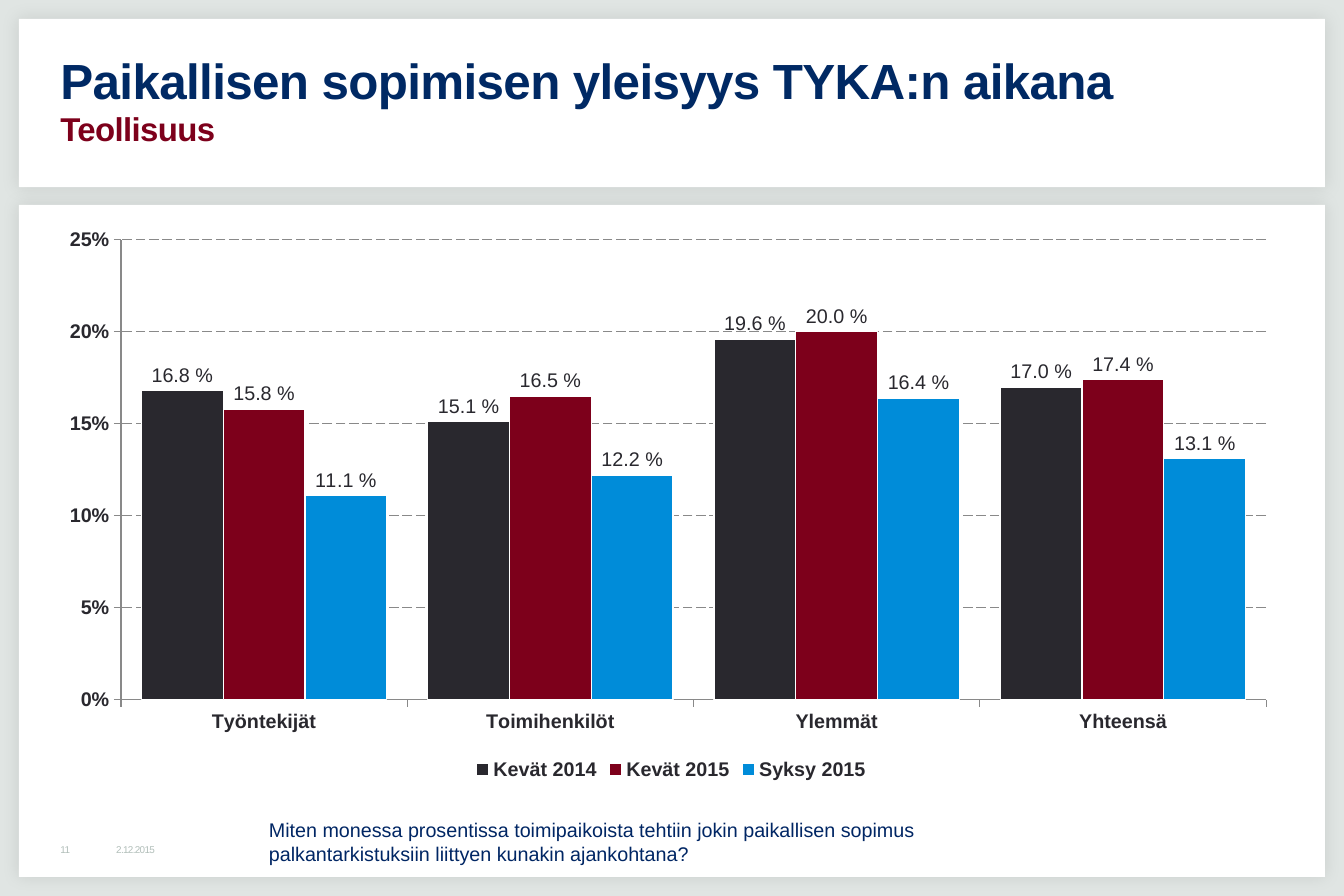
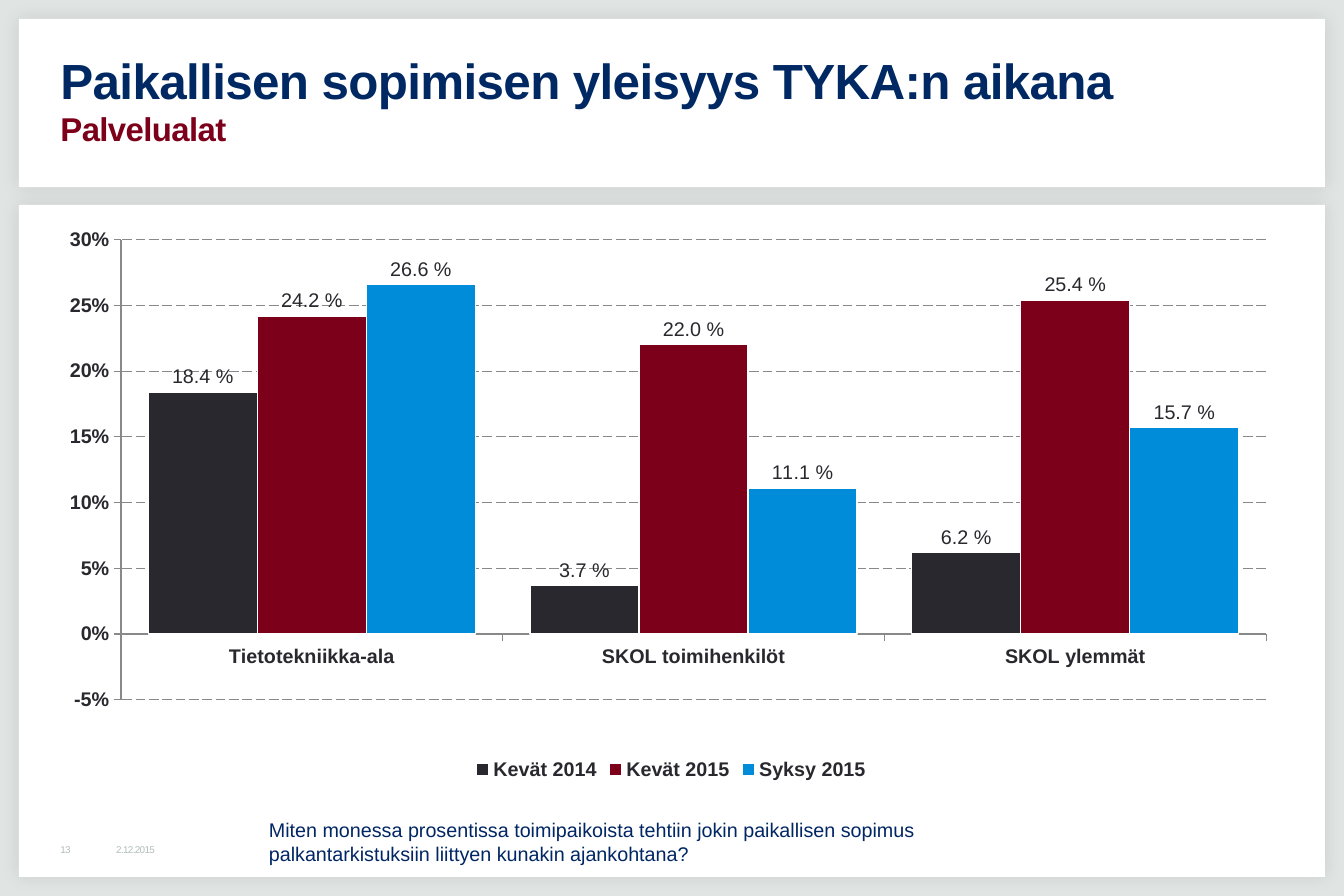
"""Build two slides comparing how common local agreements were, by sector."""
import lxml.etree
import pptx
import pptx.chart.data
import pptx.dml.color
import pptx.enum.chart
import pptx.enum.dml
import pptx.enum.shapes
import pptx.enum.text
import pptx.oxml
import pptx.oxml.ns
import pptx.util

Inches = pptx.util.Inches
Pt = pptx.util.Pt
MIDDLE = pptx.enum.text.MSO_ANCHOR.MIDDLE
TOP = pptx.enum.text.MSO_ANCHOR.TOP

FONT = "Arial"
BACKGROUND, WHITE = "E0E5E3", "FFFFFF"
NAVY, CAPTION_BLUE, FOOTER_GREY = "002964", "002664", "B1BEB9"
INK, RED, BLUE, AXIS_GREY = "29282E", "7D001B", "008CD9", "898989"

LEFT = 0.47
PANELS = [(0.16, 0.16, 11.02, 1.42), (0.16, 1.73, 11.02, 5.67)]
FOOTER_INSETS = (0.04, 0.04, 0.04, 0.04)
TITLE = "Paikallisen sopimisen yleisyys TYKA:n aikana"
DATE = "2.12.2015"
QUESTION = (
    "Miten monessa prosentissa toimipaikoista tehtiin jokin paikallisen sopimus "
    "palkantarkistuksiin liittyen kunakin ajankohtana?"
)
SERIES = [("Kevät 2014", INK), ("Kevät 2015", RED), ("Syksy 2015", BLUE)]
SLIDES = [
    {
        "number": "11",
        "sector": "Teollisuus",
        "categories": ["Työntekijät", "Toimihenkilöt", "Ylemmät", "Yhteensä"],
        "values": [
            (0.168, 0.151, 0.196, 0.170),
            (0.158, 0.165, 0.200, 0.174),
            (0.111, 0.122, 0.164, 0.131),
        ],
        "scale": (0, 0.25),
    },
    {
        "number": "13",
        "sector": "Palvelualat",
        "categories": ["Tietotekniikka-ala", "SKOL toimihenkilöt", "SKOL ylemmät"],
        "values": [
            (0.184, 0.037, 0.062),
            (0.242, 0.220, 0.254),
            (0.266, 0.111, 0.157),
        ],
        "scale": (-0.05, 0.3),
    },
]
SHADOW = (
    '<a:effectLst %s><a:outerShdw blurRad="127000" dist="0" algn="ctr" rotWithShape="0">'
    '<a:srgbClr val="000000"><a:alpha val="10000"/></a:srgbClr>'
    "</a:outerShdw></a:effectLst>" % pptx.oxml.ns.nsdecls("a")
)
PLOT_LAYOUT = {
    "layoutTarget": "inner", "xMode": "edge", "yMode": "edge",
    "x": "0.053", "y": "0.028", "w": "0.93", "h": "0.821",
}


def color(value):
    """Turn a hex string into a colour."""
    return pptx.dml.color.RGBColor.from_string(value)


def add_text(slide, box, parts, insets=(0.1, 0.05, 0.1, 0.05), anchor=TOP, bold=False, tracking="0"):
    """Add a text box with one line per (text, size, colour) part."""
    shape = slide.shapes.add_textbox(*[Inches(length) for length in box])
    frame = shape.text_frame
    frame.word_wrap = True
    frame.vertical_anchor = anchor
    frame.margin_left, frame.margin_top, frame.margin_right, frame.margin_bottom = map(Inches, insets)
    frame.text = "\v".join(text for text, size, shade in parts)
    paragraph = frame.paragraphs[0]
    for run, (text, size, shade) in zip(paragraph.runs, parts):
        run.font.name = FONT
        run.font.size = Pt(size)
        run.font.bold = bold
        run.font.color.rgb = color(shade)
        run._r.get_or_add_rPr().set("spc", tracking)
    return paragraph


presentation = pptx.Presentation()
presentation.slide_width = Inches(11.34)
presentation.slide_height = Inches(7.56)
background = presentation.slide_master.background.fill
background.solid()
background.fore_color.rgb = color(BACKGROUND)

for content in SLIDES:
    slide = presentation.slides.add_slide(presentation.slide_layouts[6])

    for box in PANELS:
        panel = slide.shapes.add_shape(
            pptx.enum.shapes.MSO_SHAPE.RECTANGLE, *[Inches(length) for length in box]
        )
        panel.fill.solid()
        panel.fill.fore_color.rgb = color(WHITE)
        panel.line.fill.background()
        panel._element.spPr.append(pptx.oxml.parse_xml(SHADOW))

    for left, width, text in [(LEFT, 0.47, content["number"]), (0.94, 1.42, DATE)]:
        add_text(slide, (left, 7.09, width, 0.16), [(text, 6, FOOTER_GREY)],
                 FOOTER_INSETS, MIDDLE, tracking="-40")

    title = add_text(slide, (LEFT, 0.31, 10.4, 1.1),
                     [(TITLE, 30, NAVY), (content["sector"], 20, RED)],
                     (0.04, 0.05, 0.1, 0.05), MIDDLE, bold=True, tracking="-40")
    title.line_spacing = 0.95

    data = pptx.chart.data.CategoryChartData(number_format="0.0%")
    data.categories = content["categories"]
    for (name, shade), values in zip(SERIES, content["values"]):
        data.add_series(name, values)
    chart = slide.shapes.add_chart(
        pptx.enum.chart.XL_CHART_TYPE.COLUMN_CLUSTERED,
        Inches(LEFT), Inches(1.89), Inches(10.39), Inches(4.73), data,
    ).chart
    chart.has_title = False
    chart.font.name = FONT
    chart.font.size = Pt(12)
    chart.font.color.rgb = color(INK)
    chart.has_legend = True
    chart.legend.position = pptx.enum.chart.XL_LEGEND_POSITION.BOTTOM
    chart.legend.include_in_layout = False

    for axis in (chart.category_axis, chart.value_axis):
        axis.major_tick_mark = pptx.enum.chart.XL_TICK_MARK.OUTSIDE
        axis.format.line.color.rgb = color(AXIS_GREY)
        axis.format.line.width = Pt(0.75)
    for part in (chart.legend, chart.category_axis.tick_labels, chart.value_axis.tick_labels):
        part.font.name = FONT
        part.font.size = Pt(12)
        part.font.bold = True
        part.font.color.rgb = color(INK)

    value_axis = chart.value_axis
    value_axis.minimum_scale, value_axis.maximum_scale = content["scale"]
    value_axis.major_unit = 0.05
    value_axis.tick_labels.number_format = "0%"
    value_axis.tick_labels.number_format_is_linked = False
    gridline = value_axis.major_gridlines.format.line
    gridline.color.rgb = color(AXIS_GREY)
    gridline.width = Pt(0.75)
    gridline.dash_style = pptx.enum.dml.MSO_LINE.LONG_DASH

    plot = chart.plots[0]
    plot.gap_width = 50
    plot.overlap = 0
    plot.vary_by_categories = False
    plot.has_data_labels = True
    labels = plot.data_labels
    labels.show_value = True
    labels.number_format = "0.0\\ %"
    labels.number_format_is_linked = False
    labels.position = pptx.enum.chart.XL_LABEL_POSITION.OUTSIDE_END
    labels.font.name = FONT
    labels.font.size = Pt(12)
    labels.font.color.rgb = color(INK)
    for series, (name, shade) in zip(plot.series, SERIES):
        series.invert_if_negative = False
        series.format.fill.solid()
        series.format.fill.fore_color.rgb = color(shade)
        series.format.line.color.rgb = color(WHITE)
        series.format.line.width = Pt(0.75)

    qualified = pptx.oxml.ns.qn
    plot_area = chart._chartSpace.chart.plotArea
    for layout in plot_area.findall(qualified("c:layout")):
        plot_area.remove(layout)
    layout = lxml.etree.Element(qualified("c:layout"))
    manual_layout = lxml.etree.SubElement(layout, qualified("c:manualLayout"))
    for tag, setting in PLOT_LAYOUT.items():
        lxml.etree.SubElement(manual_layout, qualified("c:" + tag)).set("val", setting)
    plot_area.insert(0, layout)

    add_text(slide, (2.17, 6.85, 6.22, 0.5), [(QUESTION, 12, CAPTION_BLUE)])

presentation.save("out.pptx")
